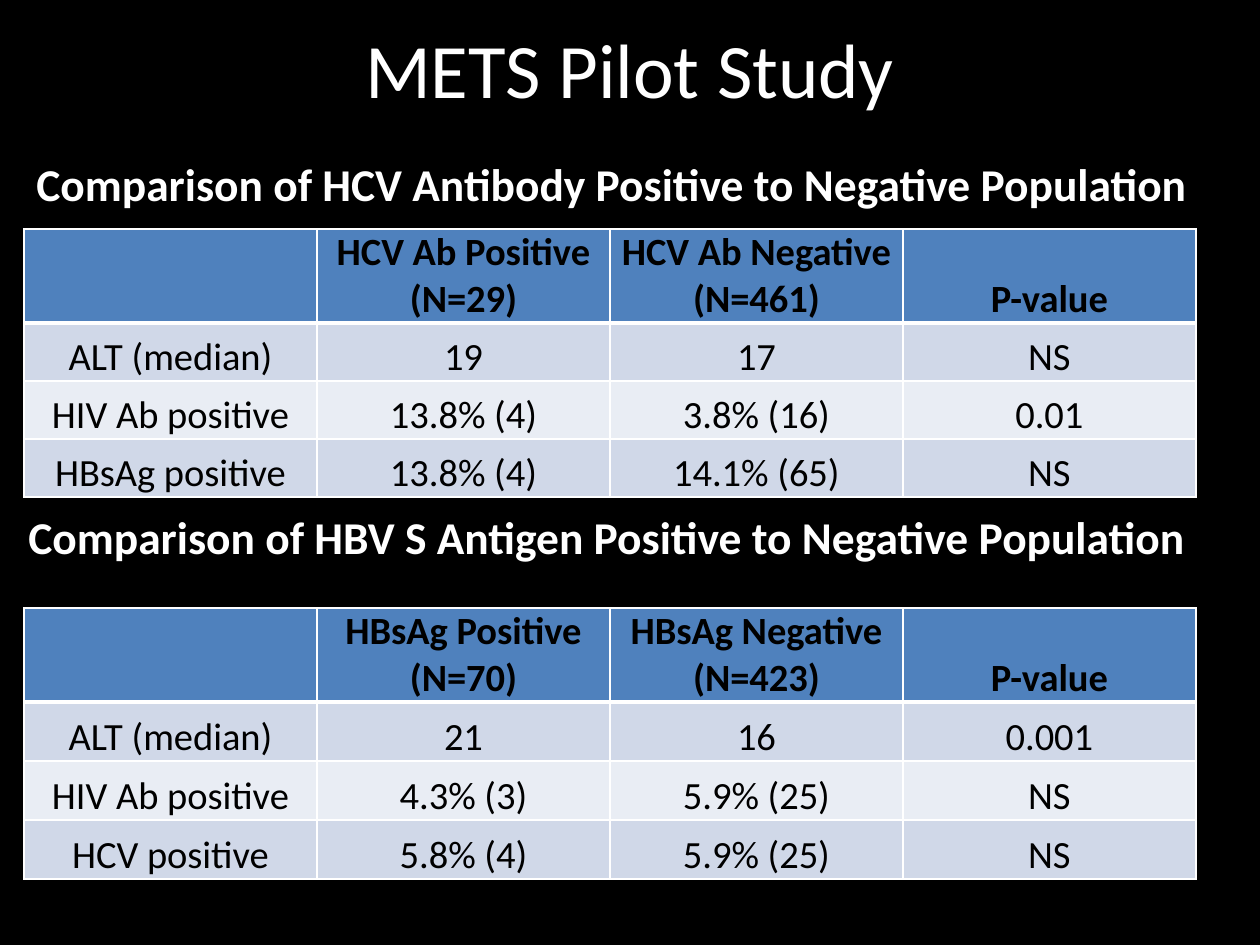
from dataclasses import dataclass

from lxml.etree import SubElement
from pptx import Presentation
from pptx.dml.color import RGBColor
from pptx.enum.text import MSO_ANCHOR, PP_ALIGN
from pptx.oxml.ns import qn
from pptx.util import Pt


@dataclass(frozen=True)
class Theme:
    face: str = "Calibri"
    back: str = "000000"
    light: str = "FFFFFF"
    dark: str = "000000"
    head: str = "4F81BD"
    bands: tuple = ("D0D8E8", "E9EDF4")
    title: int = 44
    label: int = 26
    cell: int = 22
    thin: int = 1
    thick: int = 3


def px(count):
    return round(count * 914400 / 126)


def apply(item, form):
    for name, value in form.items():
        setattr(item, name, value)


class Deck:
    def __init__(self, theme):
        self.theme = theme
        self.show = Presentation()
        apply(self.show, {"slide_width": px(1260), "slide_height": px(945)})
        self.slide = self.show.slides.add_slide(self.show.slide_layouts[6])
        self.paint(self.slide.background.fill, theme.back)

    def paint(self, fill, color):
        fill.solid()
        fill.fore_color.rgb = RGBColor.from_string(color)

    def words(self, frame, text, size, color, bold, align):
        frame.text = text
        form = {"name": self.theme.face, "size": Pt(size), "bold": bold}
        for para in frame.paragraphs:
            para.alignment = align
            for run in para.runs:
                apply(run.font, form)
                run.font.color.rgb = RGBColor.from_string(color)

    def text(self, text, box, size, bold=False, align=PP_ALIGN.LEFT, inset=6):
        frame = self.slide.shapes.add_textbox(*map(px, box)).text_frame
        apply(frame, {"word_wrap": True, "margin_top": px(inset),
                      "vertical_anchor": MSO_ANCHOR.TOP})
        self.words(frame, text, size, self.theme.light, bold, align)

    def edge(self, cell, row):
        look = self.theme
        props = cell._tc.get_or_add_tcPr()
        widths = {"L": look.thin, "R": look.thin,
                  "T": look.thick if row == 1 else look.thin,
                  "B": look.thick if row == 0 else look.thin}
        for side, width in widths.items():
            line = SubElement(props, qn(f"a:ln{side}"), w=str(Pt(width)))
            fill = SubElement(line, qn("a:solidFill"))
            SubElement(fill, qn("a:srgbClr"), val=look.light)

    def table(self, rows, left, top, width, first, rest):
        look = self.theme
        highs = [first] + [rest] * (len(rows) - 1)
        wide = len(rows[0])
        box = (left, top, width * wide, sum(highs))
        grid = self.slide.shapes.add_table(len(rows), wide, *map(px, box)).table
        for col in grid.columns:
            col.width = px(width)
        form = {"margin_left": px(9), "margin_right": px(9), "margin_top": 0,
                "margin_bottom": 0, "vertical_anchor": MSO_ANCHOR.BOTTOM}
        for r, (texts, high) in enumerate(zip(rows, highs)):
            grid.rows[r].height = px(high)
            for c, text in enumerate(texts):
                cell = grid.cell(r, c)
                apply(cell, form)
                self.edge(cell, r)
                self.paint(cell.fill, look.bands[(r - 1) % 2] if r else look.head)
                self.words(cell.text_frame, text, look.cell, look.dark,
                           r == 0, PP_ALIGN.CENTER)


HCV = [
    ["", "HCV Ab Positive\n(N=29)", "HCV Ab Negative\n(N=461)", "P-value"],
    ["ALT (median)", "19", "17", "NS"],
    ["HIV Ab positive", "13.8% (4)", "3.8% (16)", "0.01"],
    ["HBsAg positive", "13.8% (4)", "14.1% (65)", "NS"],
]
HBV = [
    ["", "HBsAg Positive\n(N=70)", "HBsAg Negative\n(N=423)", "P-value"],
    ["ALT (median)", "21", "16", "0.001"],
    ["HIV Ab positive", "4.3% (3)", "5.9% (25)", "NS"],
    ["HCV positive", "5.8% (4)", "5.9% (25)", "NS"],
]


def main():
    look = Theme()
    deck = Deck(look)
    deck.text("METS Pilot Study", (63, 10, 1134, 158), look.title,
              align=PP_ALIGN.CENTER, inset=11)
    deck.table(HCV, 24, 229, 293, 94, 58)
    deck.table(HBV, 24, 608, 293, 94, 59)
    deck.text("Comparison of HCV Antibody Positive to Negative Population",
              (24, 150, 1192, 123), look.label, bold=True)
    deck.text("Comparison of HBV S Antigen Positive to Negative Population",
              (16, 503, 1198, 123), look.label, bold=True)
    deck.show.save("out.pptx")


if __name__ == "__main__":
    main()
